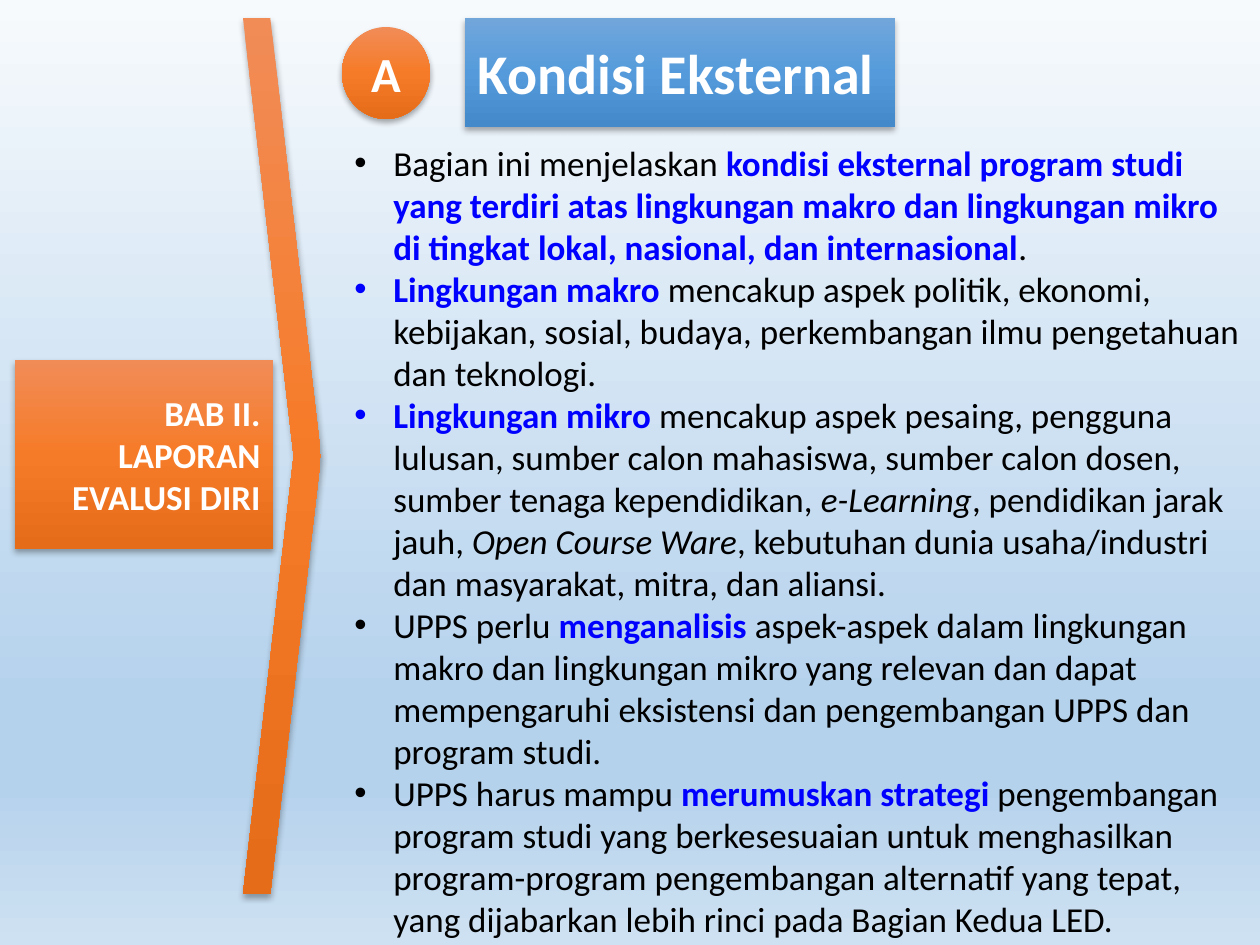
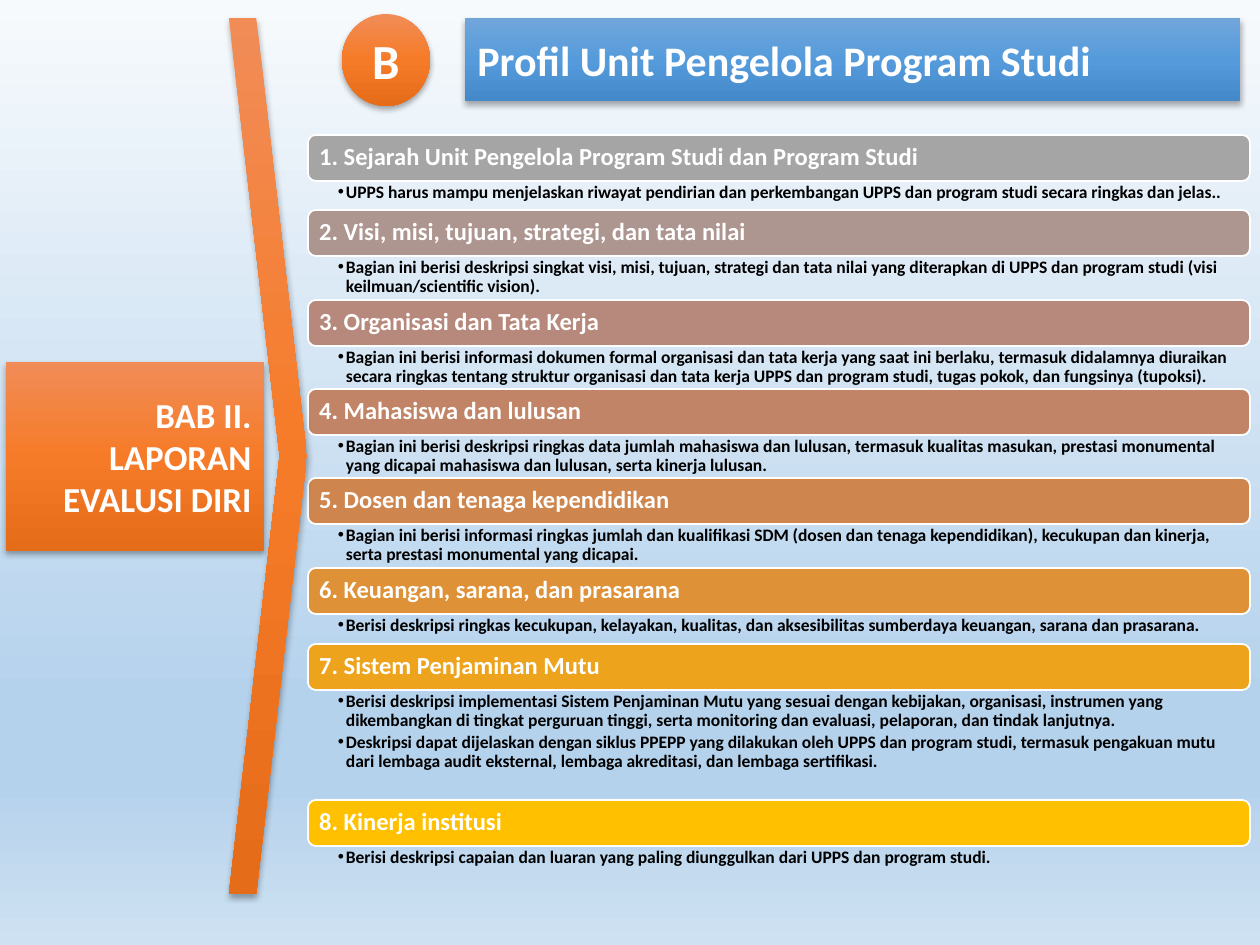
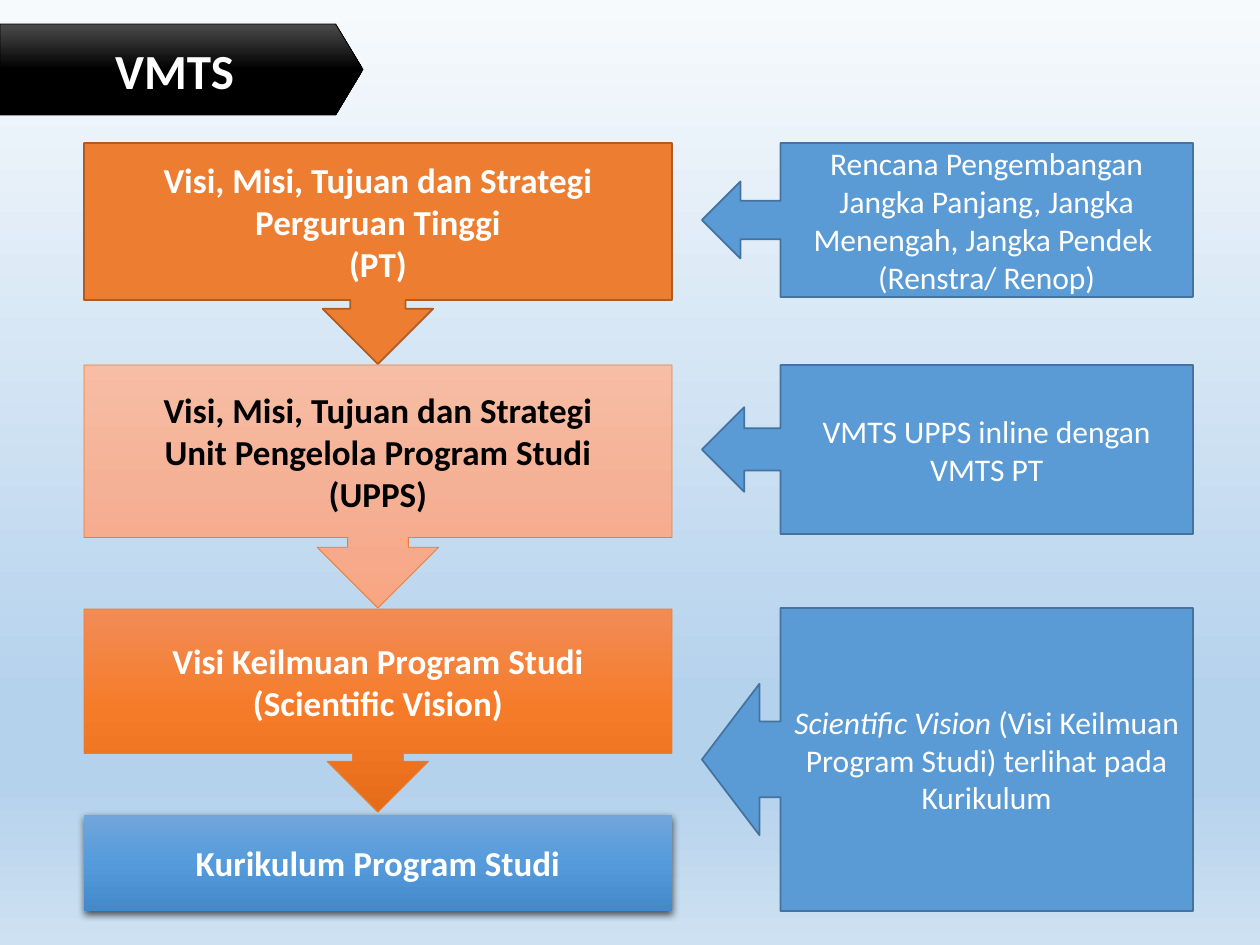
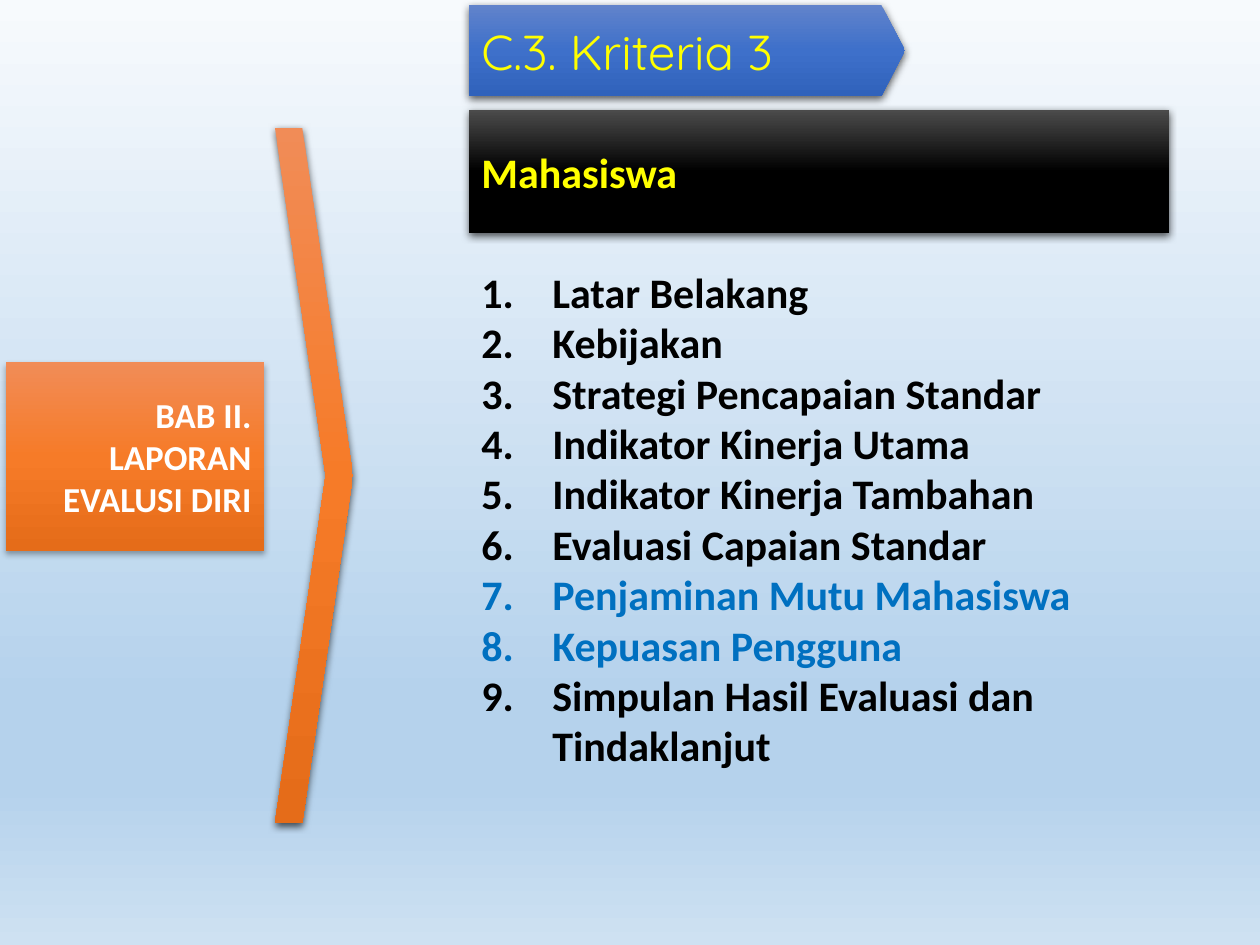
"""Build four slides on the self-evaluation report."""
import pptx
import pptx.dml.color
import pptx.enum.shapes
import pptx.enum.text
import pptx.oxml
import pptx.oxml.ns
import pptx.util
from lxml import etree

PX = 914400 / 126
FONT = "Calibri"
SHAPE = pptx.enum.shapes.MSO_SHAPE
ALIGN = pptx.enum.text.PP_ALIGN
qn = pptx.oxml.ns.qn

COLORS = {
    "white": "FFFFFF", "black": "000000", "yellow": "FFFF00", "link": "0000FF",
    "accent": "0070C0", "orange": "ED7D31", "rust": "AF5C24",
    "blue": "5B9BD5", "navy": "43739E",
}
GRADS = {
    "page": [(0, "F7FAFD"), (74, "B5D2EC"), (83, "B5D2EC"), (100, "CEE1F2")],
    "orange": [(0, "F18C57"), (50, "F67B28"), (100, "E56C19")],
    "peach": [(0, "F7BDA5"), (50, "F5B196"), (100, "F8A582")],
    "blue": [(0, "71A6DB"), (50, "559BDB"), (100, "448ACA")],
    "royal": [(0, "6183CB"), (50, "3E70CA"), (100, "3062BB")],
    "black": [(0, "4B4B4B"), (50, "000000"), (100, "000000")],
}
SOFT = (32, 3.5, 2.2)
DEEP = (63, 4.5, 1.5)
HOT = {"color": "link", "bold": True}
SLANT = {"italic": True}

POINTS = [
    ["Bagian ini menjelaskan ",
     ("kondisi eksternal program studi yang terdiri atas lingkungan makro dan "
      "lingkungan mikro di tingkat lokal, nasional, dan internasional", HOT), "."],
    [("Lingkungan makro ", HOT),
     "mencakup aspek politik, ekonomi, kebijakan, sosial, budaya, perkembangan "
     "ilmu pengetahuan dan teknologi."],
    [("Lingkungan mikro ", HOT),
     "mencakup aspek pesaing, pengguna lulusan, sumber calon mahasiswa, sumber "
     "calon dosen, sumber tenaga kependidikan, ",
     ("e-Learning", SLANT), ", pendidikan jarak jauh, ",
     ("Open Course Ware", SLANT),
     ", kebutuhan dunia usaha/industri dan masyarakat, mitra, dan aliansi."],
    ["UPPS perlu ", ("menganalisis ", HOT),
     "aspek-aspek dalam lingkungan makro dan lingkungan mikro yang relevan dan "
     "dapat mempengaruhi eksistensi dan pengembangan UPPS dan program studi."],
    ["UPPS harus mampu ", ("merumuskan strategi ", HOT),
     "pengembangan program studi yang berkesesuaian untuk menghasilkan "
     "program-program pengembangan alternatif yang tepat, yang dijabarkan lebih "
     "rinci pada Bagian Kedua LED."],
]

PARTS = [
    ("Sejarah Unit Pengelola Program Studi dan Program Studi", "A5A5A5", 29,
     ["UPPS harus mampu menjelaskan riwayat pendirian dan perkembangan UPPS dan "
      "program studi secara ringkas dan jelas.."]),
    ("Visi, misi, tujuan, strategi, dan tata nilai", "AD9590", 44,
     ["Bagian ini berisi deskripsi singkat visi, misi, tujuan, strategi dan tata "
      "nilai yang diterapkan di UPPS dan program studi (visi keilmuan/scientific "
      "vision)."]),
    ("Organisasi dan Tata Kerja", "B7897C", 43,
     ["Bagian ini berisi informasi dokumen formal organisasi dan tata kerja yang "
      "saat ini berlaku, termasuk didalamnya diuraikan secara ringkas tentang "
      "struktur organisasi dan tata kerja UPPS dan program studi, tugas pokok, "
      "dan fungsinya (tupoksi)."]),
    ("Mahasiswa dan lulusan", "C28466", 43,
     ["Bagian ini berisi deskripsi ringkas data jumlah mahasiswa dan lulusan, "
      "termasuk kualitas masukan, prestasi monumental yang dicapai mahasiswa dan "
      "lulusan, serta kinerja lulusan."]),
    ("Dosen dan tenaga kependidikan", "CE864E", 44,
     ["Bagian ini berisi informasi ringkas jumlah dan kualifikasi SDM (dosen dan "
      "tenaga kependidikan), kecukupan dan kinerja, serta prestasi monumental "
      "yang dicapai."]),
    ("Keuangan, sarana, dan prasarana", "DE9136", 30,
     ["Berisi deskripsi ringkas kecukupan, kelayakan, kualitas, dan aksesibilitas "
      "sumberdaya keuangan, sarana dan prasarana."]),
    ("Sistem Penjaminan Mutu", "EDA31C", 110,
     ["Berisi deskripsi implementasi Sistem Penjaminan Mutu yang sesuai dengan "
      "kebijakan, organisasi, instrumen yang dikembangkan di tingkat perguruan "
      "tinggi, serta monitoring dan evaluasi, pelaporan, dan tindak lanjutnya.",
      "Deskripsi dapat dijelaskan dengan siklus PPEPP yang dilakukan oleh UPPS "
      "dan program studi, termasuk pengakuan mutu dari lembaga audit eksternal, "
      "lembaga akreditasi, dan lembaga sertifikasi."]),
    ("Kinerja institusi", "FFC000", 29,
     ["Berisi deskripsi capaian dan luaran yang paling diunggulkan dari UPPS dan "
      "program studi."]),
]

TOPICS = [
    "Latar Belakang", "Kebijakan", "Strategi Pencapaian Standar",
    "Indikator Kinerja Utama", "Indikator Kinerja Tambahan",
    "Evaluasi Capaian Standar",
    [("Penjaminan Mutu Mahasiswa", {"color": "accent"})],
    [("Kepuasan Pengguna", {"color": "accent"})],
    "Simpulan Hasil Evaluasi dan Tindaklanjut",
]


def px(*sizes):
    """Turn pixel lengths into EMU."""
    return [pptx.util.Emu(round(size * PX)) for size in sizes]


def rgb(name):
    """Look up a colour name, or take a hex string as it is."""
    return pptx.dml.color.RGBColor.from_string(COLORS.get(name, name))


def child(node, tag, **attrs):
    """Append a drawing element with the given attributes."""
    return etree.SubElement(node, qn(tag), {k: str(v) for k, v in attrs.items()})


def blend(fill, node, name):
    """Give a fill the named top-to-bottom gradient."""
    fill.gradient()
    fill.gradient_angle = 270
    stops = node.find(".//" + qn("a:gsLst"))
    for stop in list(stops):
        stops.remove(stop)
    for place, color in GRADS[name]:
        stop = child(stops, "a:gs", pos=place * 1000)
        child(stop, "a:srgbClr", val=color)


def shade(shape, alpha, blur, dist):
    """Add a black shadow that falls straight down."""
    effects = shape._element.spPr.find(qn("a:effectLst"))
    outer = child(effects, "a:outerShdw", blurRad=round(blur * 12700),
                  dist=round(dist * 12700), dir=5400000, algn="ctr",
                  rotWithShape=0)
    color = child(outer, "a:srgbClr", val=COLORS["black"])
    child(color, "a:alpha", val=alpha * 1000)


def mark(para, kind, hang):
    """Give a paragraph a hanging bullet or number."""
    props = para._p.get_or_add_pPr()
    indent = px(hang)[0]
    props.set("marL", str(indent))
    props.set("indent", str(-indent))
    if kind == "number":
        child(props, "a:buFont", typeface="+mj-lt")
        child(props, "a:buAutoNum", type="arabicPeriod")
    else:
        child(props, "a:buFont", typeface="Arial")
        child(props, "a:buChar", char="•")


def write(shape, paras, size=20, color="white", bold=False, italic=False,
          font=FONT, align="LEFT", anchor="MIDDLE", inset=None, line=None,
          after=None, bullet=None, hang=0):
    """Fill a shape with paragraphs, each a string or a list of runs."""
    frame = shape.text_frame
    frame.word_wrap = True
    frame.vertical_anchor = getattr(pptx.enum.text.MSO_ANCHOR, anchor)
    if inset:
        (frame.margin_left, frame.margin_top,
         frame.margin_right, frame.margin_bottom) = px(*inset)
    for index, runs in enumerate(paras):
        para = frame.add_paragraph() if index else frame.paragraphs[0]
        para.alignment = getattr(ALIGN, align)
        if line:
            para.line_spacing = line
        if after:
            para.space_after = pptx.util.Pt(after)
        if bullet:
            mark(para, bullet, hang)
        for part in [runs] if isinstance(runs, str) else runs:
            text, own = (part, {}) if isinstance(part, str) else part
            run = para.add_run()
            run.text = text
            run.font.name = font
            run.font.size = pptx.util.Pt(size)
            run.font.bold = own.get("bold", bold)
            run.font.italic = own.get("italic", italic)
            run.font.color.rgb = rgb(own.get("color", color))


def block(slide, kind, box, fill=None, grad=None, line=None, width=1,
          shadow=None, adjust=()):
    """Add a preset shape with a flat or gradient fill."""
    shape = slide.shapes.add_shape(kind, *px(*box))
    shape.shadow.inherit = False
    for index, value in enumerate(adjust):
        shape.adjustments[index] = value
    if grad:
        blend(shape.fill, shape._element.spPr, grad)
    else:
        shape.fill.solid()
        shape.fill.fore_color.rgb = rgb(fill)
    if line:
        shape.line.color.rgb = rgb(line)
        shape.line.width = pptx.util.Pt(width)
    else:
        shape.line.fill.background()
    if shadow:
        shade(shape, *shadow)
    return shape


def prose(slide, box, paras, grow=False, **style):
    """Add a text box that starts at its top."""
    area = slide.shapes.add_textbox(*px(*box))
    write(area, paras, color="black", anchor="TOP", **style)
    if grow:
        area.text_frame.auto_size = pptx.enum.text.MSO_AUTO_SIZE.SHAPE_TO_FIT_TEXT


def chapter(slide, left, top, wedge, shadow=SOFT):
    """Add the chapter label and the tall chevron beside it."""
    block(slide, SHAPE.CHEVRON, wedge, grad="orange", shadow=shadow,
          adjust=[0.65])
    label = block(slide, SHAPE.RECTANGLE, (left, top, 258, 189),
                  grad="orange", shadow=SOFT)
    write(label, ["BAB II. LAPORAN EVALUSI DIRI"], bold=True, align="RIGHT")


def header(slide, letter, top, title, box, size):
    """Add a lettered disc and the title bar."""
    disc = block(slide, SHAPE.OVAL, (342, top, 88, 92), grad="orange",
                 shadow=SOFT)
    write(disc, [letter], size=28, bold=True, align="CENTER")
    bar = block(slide, SHAPE.RECTANGLE, box, grad="blue", shadow=SOFT)
    write(bar, [title], size=size, bold=True)


def bands(slide, top):
    """Stack the numbered headings with their details below."""
    for number, (title, color, height, notes) in enumerate(PARTS, 1):
        band = block(slide, SHAPE.ROUNDED_RECTANGLE, (308, top, 942, 46),
                     fill=color, line="white")
        write(band, [f"{number}. {title}"], size=14, bold=True, line=0.9,
              inset=(9, 8, 9, 8))
        prose(slide, (308, top + 46, 942, height), notes, size=10, bold=True,
              line=0.9, after=2, inset=(30, 2, 13, 2), bullet="dot", hang=8)
        top += 46 + height


def step(slide, top, height, body, paras, ink="white", **look):
    """Add a box whose arrow points down to the next step."""
    shape = block(slide, SHAPE.DOWN_ARROW_CALLOUT, (84, top, 588, height),
                  adjust=[0.25, 0.25, 0.25, body], **look)
    write(shape, paras, color=ink, bold=True, align="CENTER")


def aside(slide, top, height, head, body, paras):
    """Add a box whose arrow points left to a step."""
    shape = block(slide, SHAPE.LEFT_ARROW_CALLOUT, (702, top, 491, height),
                  fill="blue", line="navy", adjust=[0.25, 0.25, head, body])
    write(shape, paras, size=18, align="CENTER")


def outer(slide):
    """Draw the slide on external conditions."""
    chapter(slide, 15, 360, (243, 18, 78, 876))
    header(slide, "A", 27, "Kondisi Eksternal", (465, 18, 430, 109), 32)
    prose(slide, (342, 135, 918, 819), POINTS, grow=True, bullet="dot", hang=39)


def profile(slide):
    """Draw the slide on the unit's profile."""
    bands(slide, 135)
    chapter(slide, 6, 362, (229, 18, 78, 876))
    header(slide, "B", 14, "Profil Unit Pengelola Program Studi",
           (465, 18, 775, 83), 24)


def vision(slide):
    """Draw the slide on how the visions lead to the curriculum."""
    goal = "Visi, Misi, Tujuan dan Strategi"
    step(slide, 143, 221, 0.71, [goal, "Perguruan Tinggi", "(PT)"],
         fill="orange", line="rust")
    step(slide, 365, 243, 0.71, [goal, "Unit Pengelola Program Studi", "(UPPS)"],
         ink="black", grad="peach", line="orange", width=0.5)
    step(slide, 609, 203, 0.71,
         ["Visi Keilmuan Program Studi", "(Scientific Vision)"],
         grad="orange", line="orange", width=0.5)
    base = block(slide, SHAPE.RECTANGLE, (84, 815, 588, 96), grad="blue",
                 shadow=DEEP)
    write(base, ["Kurikulum Program Studi"], bold=True, align="CENTER")
    aside(slide, 143, 154, 0.25, 0.84,
          ["Rencana Pengembangan Jangka Panjang, Jangka Menengah, Jangka Pendek ",
           "(Renstra/ Renop)"])
    aside(slide, 365, 169, 0.25, 0.84, ["VMTS UPPS inline dengan VMTS PT"])
    aside(slide, 608, 303, 0.19, 0.84,
          [[("Scientific Vision ", SLANT),
            "(Visi Keilmuan Program Studi) terlihat pada Kurikulum"]])
    flag = block(slide, SHAPE.PENTAGON, (0, 24, 363, 91), grad="black",
                 line="black", width=0.5, adjust=[0.3])
    write(flag, ["VMTS"], size=28, bold=True, align="CENTER")


def students(slide):
    """Draw the slide on the third criterion."""
    bar = block(slide, SHAPE.RECTANGLE, (469, 110, 700, 123), grad="black",
                shadow=DEEP)
    write(bar, ["Mahasiswa"], size=24, color="yellow", bold=True)
    flag = block(slide, SHAPE.PENTAGON, (469, 5, 436, 91), grad="royal",
                 shadow=DEEP, adjust=[0.26])
    write(flag, ["C.3. Kriteria 3"], size=28, color="yellow", font="Quicksand")
    prose(slide, (469, 260, 700, 522), TOPICS, grow=True, size=24, bold=True,
          bullet="number", hang=71)
    chapter(slide, 6, 362, (275, 128, 78, 695), shadow=DEEP)


def main():
    """Build and save the deck."""
    deck = pptx.Presentation()
    deck.slide_width, deck.slide_height = px(1260, 945)
    master = deck.slide_master
    blend(master.background.fill, master._element, "page")
    for draw in (outer, profile, vision, students):
        draw(deck.slides.add_slide(deck.slide_layouts[6]))
    deck.save("out.pptx")


if __name__ == "__main__":
    main()
